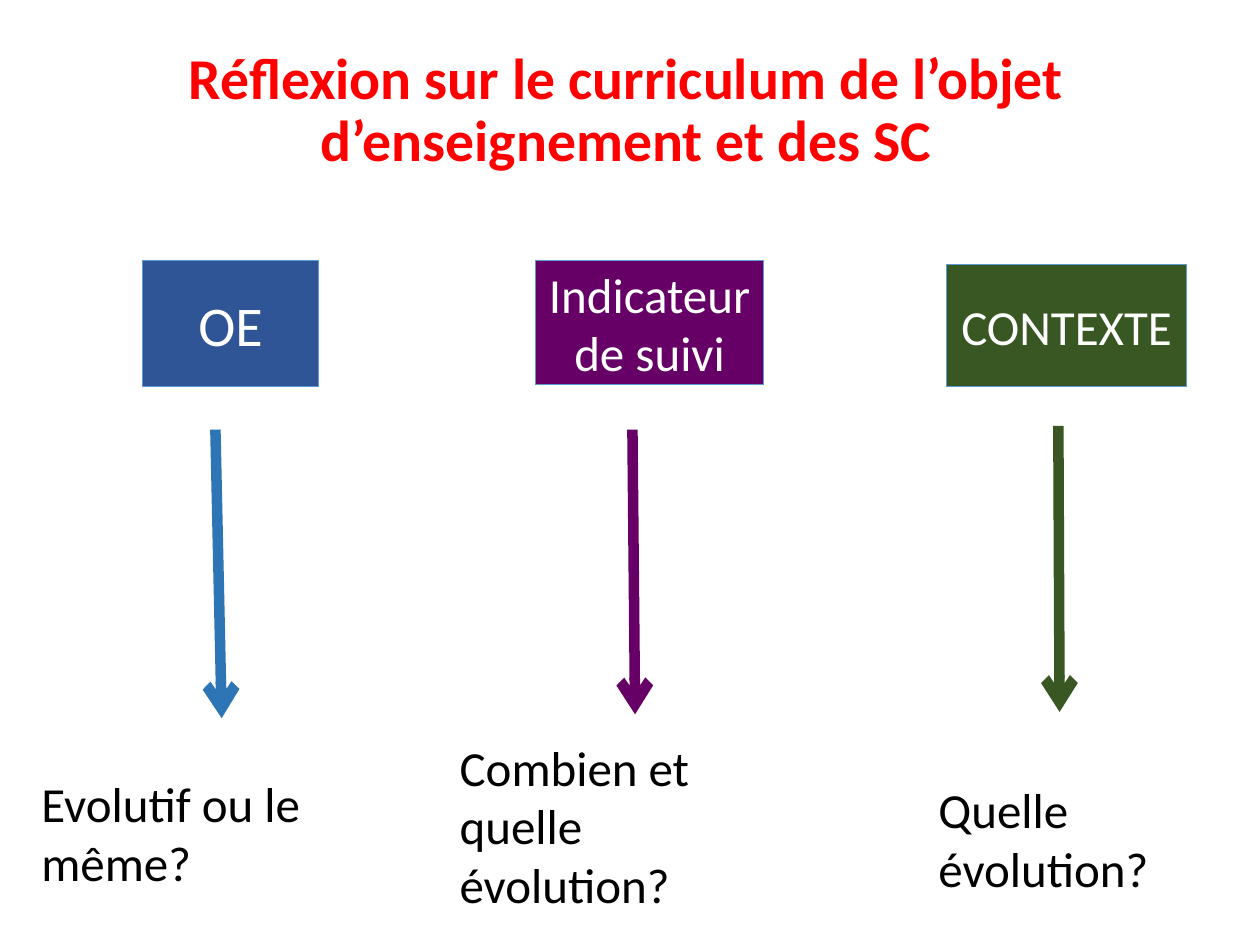
from lxml.etree import SubElement
from pptx import Presentation
from pptx.dml.color import RGBColor
from pptx.enum.shapes import MSO_CONNECTOR, MSO_SHAPE
from pptx.enum.text import MSO_ANCHOR, PP_ALIGN
from pptx.oxml.ns import qn
from pptx.util import Pt


def color(code):
    return RGBColor.from_string(code)


class Board:
    font = "Calibri"
    edge = "5B9BD5"

    def __init__(self, slide):
        self.slide = slide

    def letter(self, shape, text, size, code, align, anchor, bold=False):
        frame = shape.text_frame
        frame.word_wrap = True
        frame.vertical_anchor = anchor
        para = frame.paragraphs[0]
        para.text = text
        para.alignment = align
        font = para.font
        font.name = self.font
        font.size = Pt(size)
        font.bold = bold
        font.color.rgb = color(code)
        return para

    def title(self, area, text):
        box = self.slide.shapes.add_textbox(*map(Pt, area))
        para = self.letter(box, text, 33, "FF0000", PP_ALIGN.CENTER,
                           MSO_ANCHOR.MIDDLE, True)
        para.line_spacing = 0.9

    def label(self, area, text):
        box = self.slide.shapes.add_textbox(*map(Pt, area))
        self.letter(box, text, 28, "000000", PP_ALIGN.LEFT, MSO_ANCHOR.TOP)

    def block(self, area, text, size, fill):
        box = self.slide.shapes.add_shape(MSO_SHAPE.RECTANGLE, *map(Pt, area))
        box.shadow.inherit = False
        box.fill.solid()
        box.fill.fore_color.rgb = color(fill)
        box.line.color.rgb = color(self.edge)
        box.line.width = Pt(0.5)
        self.letter(box, text, size, "FFFFFF", PP_ALIGN.CENTER,
                    MSO_ANCHOR.MIDDLE)

    def arrow(self, ends, code):
        link = self.slide.shapes.add_connector(
            MSO_CONNECTOR.STRAIGHT, *map(Pt, ends))
        link.line.color.rgb = color(code)
        link.line.width = Pt(6)
        props = link._element.spPr
        SubElement(props.find(qn("a:ln")), qn("a:tailEnd"), type="arrow")
        SubElement(props, qn("a:effectLst"))


def main():
    deck = Presentation()
    deck.slide_width, deck.slide_height = Pt(720), Pt(540)
    board = Board(deck.slides.add_slide(deck.slide_layouts[6]))
    board.title((47.5, 11.5, 620.6, 104.4),
                "Réflexion sur le curriculum de l’objet d’enseignement et des SC")
    columns = [
        ("OE", 32, "2F5597", (81.4, 149, 100.8, 72),
         "2E75B6", (123.1, 245.5, 126.7, 410.4),
         "Evolutif ou le même?", (16.6, 438.5, 225.4, 75)),
        ("Indicateur de suivi", 28, "660066", (306, 149, 130.4, 71),
         "660066", (361.4, 245.5, 362.9, 408.2),
         "Combien et quelle évolution?", (255.6, 417.6, 203.8, 108.7)),
        ("CONTEXTE", 28, "385723", (540.7, 151.2, 137.5, 69.8),
         "385723", (604.8, 243.4, 605.5, 406.8),
         "Quelle évolution?", (529.2, 442, 144, 75)),
    ]
    for name, size, fill, area, tint, ends, query, spot in columns:
        board.block(area, name, size, fill)
        board.arrow(ends, tint)
        board.label(spot, query)
    deck.save("out.pptx")


if __name__ == "__main__":
    main()
